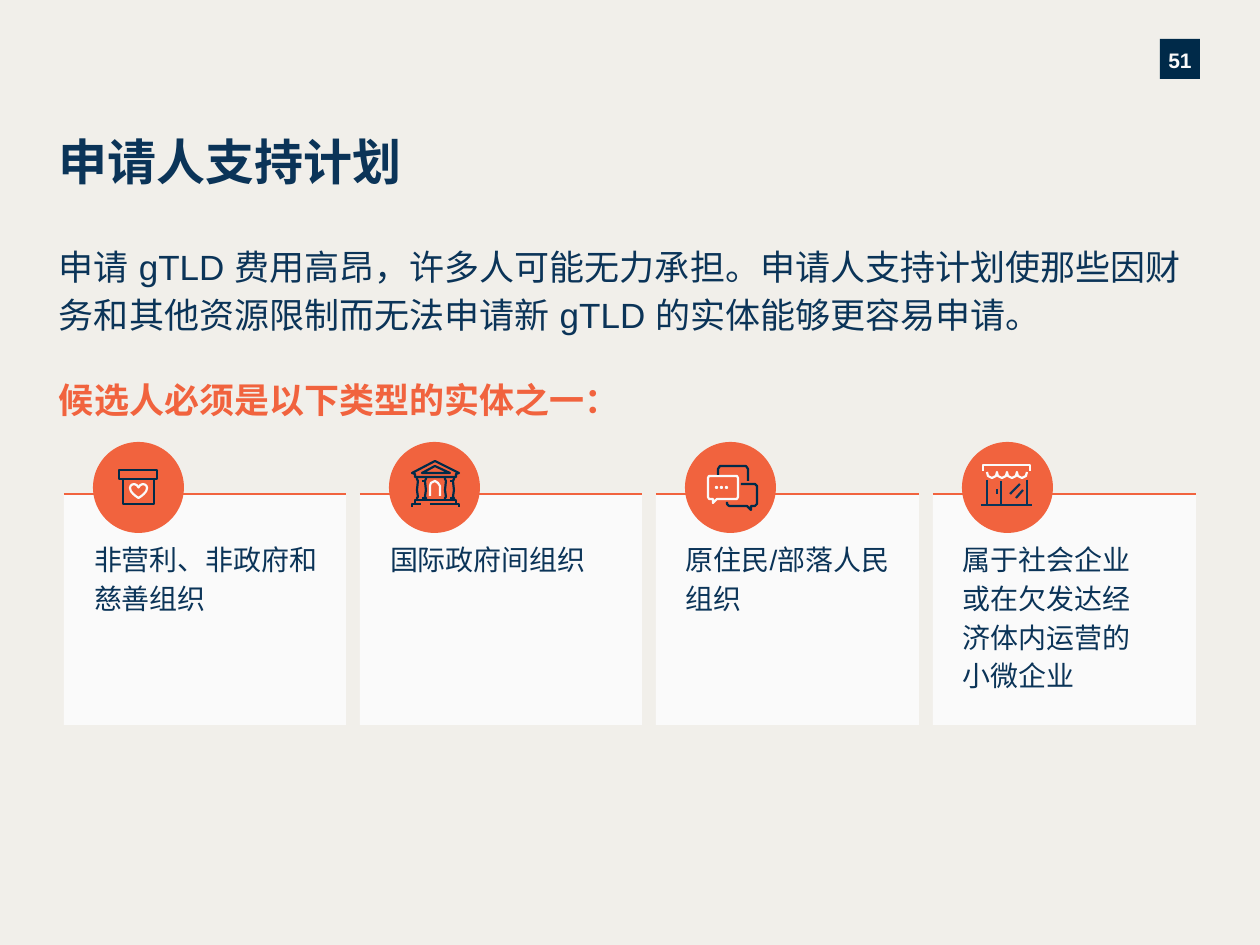
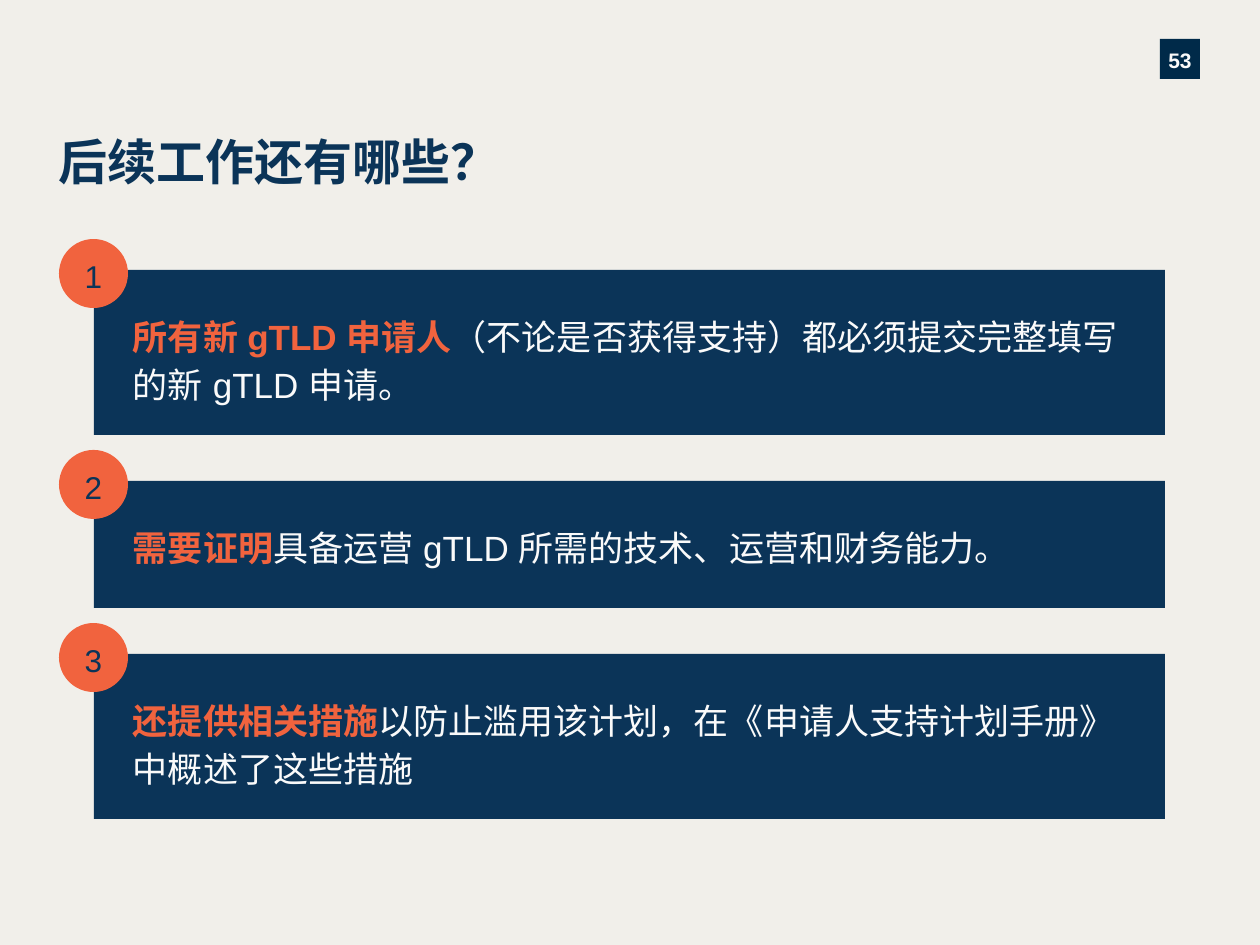
from lxml import etree
from pptx import Presentation
from pptx.dml.color import RGBColor
from pptx.enum.shapes import MSO_CONNECTOR, MSO_SHAPE
from pptx.enum.text import MSO_ANCHOR, MSO_AUTO_SIZE, PP_ALIGN
from pptx.oxml.ns import qn
from pptx.util import Emu, Pt

RECT, OVAL, HEART = MSO_SHAPE.RECTANGLE, MSO_SHAPE.OVAL, MSO_SHAPE.HEART
STRAIGHT = MSO_CONNECTOR.STRAIGHT
LEFT, CENTER = PP_ALIGN.LEFT, PP_ALIGN.CENTER
TOP, MIDDLE = MSO_ANCHOR.TOP, MSO_ANCHOR.MIDDLE
NO_FIT = MSO_AUTO_SIZE.NONE

PAPER, WHITE, NAVY, INK, BADGE, ORANGE = (
    "F1EFEA", "FAFAFA", "0B3458", "002B49", "002A49", "F1633E")
BODY_FONT, HEAD_FONT = "Arial", "Noto Sans"
EMU_PER_PX = 914400 / 126
STROKE = 1.25
MARGIN = 59


def px(n):
    return Emu(round(n * EMU_PER_PX))


def rgb(color):
    return RGBColor.from_string(color)


def set_frame(tf, insets=(0, 0, 0, 0), anchor=TOP, align=LEFT, spacing=1.15):
    tf.word_wrap = True
    tf.auto_size = NO_FIT
    tf.vertical_anchor = anchor
    tf.margin_left, tf.margin_top, tf.margin_right, tf.margin_bottom = map(px, insets)
    p = tf.paragraphs[0]
    p.alignment = align
    p.line_spacing = spacing
    p.space_before = Pt(0)
    return tf


def write(tf, text, size=20, color=NAVY, bold=False, font=BODY_FONT):
    p = tf.paragraphs[0]
    for i, line in enumerate(text.split("\n")):
        if i:
            p.add_line_break()
        r = p.add_run()
        r.text = line
        r.font.size = Pt(size)
        r.font.bold = bold
        r.font.color.rgb = rgb(color)
        r.font.name = font
        etree.SubElement(r.font._element, qn("a:ea")).set("typeface", font)


def paint(s, fill=None, line=None):
    s.shadow.inherit = False
    if fill:
        s.fill.solid()
        s.fill.fore_color.rgb = rgb(fill)
    else:
        s.fill.background()
    if line:
        s.line.color.rgb = rgb(line)
        s.line.width = Pt(STROKE)
    else:
        s.line.fill.background()
    return s


def add_preset(slide, kind, x, y, w, h, fill=None, line=None):
    return paint(slide.shapes.add_shape(kind, px(x), px(y), px(w), px(h)), fill, line)


def add_label(slide, x, y, w, h, text, **fmt):
    s = slide.shapes.add_textbox(px(x), px(y), px(w), px(h))
    write(set_frame(s.text_frame), text, **fmt)


def add_line(slide, x1, y1, x2, y2, color):
    c = slide.shapes.add_connector(STRAIGHT, px(x1), px(y1), px(x2), px(y2))
    c.line.color.rgb = rgb(color)
    c.line.width = Pt(STROKE)
    etree.SubElement(c._element.spPr, qn("a:effectLst"))


def add_stroke(slide, x, y, points, color, close=False):
    pts = [(x + dx, y + dy) for dx, dy in points]
    if len(pts) == 2:
        add_line(slide, *pts[0], *pts[1], color)
        return
    pts = [(px(a), px(b)) for a, b in pts]
    builder = slide.shapes.build_freeform(*pts[0])
    builder.add_line_segments(pts[1:], close=close)
    paint(builder.convert_to_shape(), line=color)


def draw_donation_box(slide, x, y):
    add_preset(slide, RECT, x + 26, y + 28, 38, 9, line=INK)
    add_preset(slide, RECT, x + 30, y + 37, 31, 25, line=INK)
    add_preset(slide, HEART, x + 37, y + 42, 17, 14, line=WHITE)


def draw_institution(slide, x, y):
    outer_side = [(28, 58), (28, 56), (29, 55), (28, 48), (29, 39), (28, 37), (28, 35)]
    inner_side = [(65 - a, b) for a, b in outer_side]
    for dx in (0, 28):
        for part in (outer_side, inner_side, [(33, 39), (36, 39)], [(33, 56), (36, 56)]):
            add_stroke(slide, x + dx, y, part, INK)
    for part in ([(41, 62), (70, 62), (70, 65)],
                 [(23, 65), (23, 62), (32, 62)],
                 [(26, 62), (26, 58), (67, 58), (67, 62)]):
        add_stroke(slide, x, y, part, INK)
    door = [(41, 54), (41, 44), (42, 41), (46, 39), (49, 41), (51, 44), (51, 54)]
    add_stroke(slide, x, y, door, WHITE)
    pediment = [(46, 24), (33, 31), (61, 31)]
    roof = [(67, 35), (26, 35), (26, 32), (23, 31), (46, 19), (70, 31), (67, 32)]
    for part in (pediment, roof):
        add_stroke(slide, x, y, part, INK, close=True)


def draw_conversation(slide, x, y):
    front = [(24, 34), (52, 34), (53, 36), (53, 55), (52, 57), (32, 57),
             (28, 61), (28, 57), (24, 57), (23, 55), (23, 36)]
    right = [(42, 60), (42, 62), (44, 64), (62, 64), (66, 68), (66, 64),
             (70, 64), (72, 62), (72, 44), (70, 42), (56, 42)]
    back = [(33, 33), (33, 27), (35, 24), (61, 24), (63, 27), (63, 39)]
    add_stroke(slide, x, y, front, WHITE, close=True)
    add_stroke(slide, x, y, right, INK)
    add_stroke(slide, x, y, back, INK)
    for dx in (31, 36, 41):
        add_preset(slide, OVAL, x + dx, y + 45, 1, 1, WHITE, WHITE)


def draw_shop(slide, x, y):
    for part in ([(25, 38), (25, 63)], [(39, 39), (39, 63)], [(65, 38), (65, 63)],
                 [(35, 47), (35, 52)], [(19, 63), (70, 63)],
                 [(58, 42), (48, 52)], [(61, 48), (54, 56)]):
        add_stroke(slide, x, y, part, NAVY)
    scallop = [(0, 30), (1, 34), (5, 36), (9, 34), (10, 30)]
    fringe = [(25 + 10 * i + a, b) for i in range(4) for a, b in scallop]
    add_stroke(slide, x, y, fringe, WHITE)
    add_stroke(slide, x, y, [(21, 29), (21, 23), (68, 23), (68, 29)], WHITE)


def add_card(slide, x, y, w, h, text, draw_icon):
    card = add_preset(slide, RECT, x, y, w, h, WHITE)
    write(set_frame(card.text_frame, (30, 44, 20, 25)), text, size=16)
    add_line(slide, x, y, x + w, y, ORANGE)
    add_preset(slide, OVAL, x + 29, y - 52, 91, 91, ORANGE)
    draw_icon(slide, x + 29, y - 52)


def add_step(slide, x, y, w, h, number, runs):
    box = add_preset(slide, RECT, x, y, w, h, NAVY)
    tf = set_frame(box.text_frame, (39, 39, 44, 39))
    for text, fmt in runs:
        write(tf, text, **fmt)
    dot = add_preset(slide, OVAL, x - 35, y - 31, 69, 69, ORANGE)
    tf = set_frame(dot.text_frame, (13, 6, 13, 6), MIDDLE, CENTER)
    write(tf, str(number), size=18)


def add_base(prs, title, page):
    slide = prs.slides.add_slide(prs.slide_layouts.get_by_name("Title Only"))
    badge = add_preset(slide, RECT, 1160, 39, 40, 40, BADGE)
    tf = set_frame(badge.text_frame, anchor=MIDDLE, align=CENTER, spacing=1.08)
    write(tf, str(page), size=12, color=WHITE, bold=True)
    s = slide.shapes.title
    s.left, s.top, s.width, s.height = px(MARGIN), px(123), px(740), px(72)
    write(set_frame(s.text_frame), title, size=28, bold=True, font=HEAD_FONT)
    return slide


def build_support_slide(prs):
    slide = add_base(prs, "申请人支持计划", 51)
    add_label(slide, MARGIN, 239, 1137, 120,
              "申请 gTLD 费用高昂，许多人可能无力承担。申请人支持计划使那些因"
              "财务和其他资源限制而无法申请新 gTLD 的实体能够更容易申请。")
    add_label(slide, MARGIN, 372, 979, 54, "候选人必须是以下类型的实体之一：",
              color=ORANGE, bold=True, font=HEAD_FONT)
    cards = [
        (282, "非营利、非政府和慈善组织", draw_donation_box),
        (282, "国际政府间组织", draw_institution),
        (263, "原住民/部落人民组织", draw_conversation),
        (263, "属于社会企业\n或在欠发达经\n济体内运营的\n小微企业", draw_shop),
    ]
    x, gap = 64, 14
    for w, text, draw_icon in cards:
        add_card(slide, x, 494, w, 231, text, draw_icon)
        x += w + gap


def build_next_steps_slide(prs):
    slide = add_base(prs, "后续工作还有哪些？", 53)
    strong = dict(color=ORANGE, bold=True, font=HEAD_FONT)
    strong_latin = dict(strong, font=BODY_FONT)
    plain = dict(color=WHITE)
    steps = [
        (165, [("所有新 ", strong), ("gTLD ", strong_latin), ("申请人", strong),
               ("（不论是否获得支持）都必须提交完整填写的新 gTLD 申请。", plain)]),
        (127, [("需要证明", strong),
               ("具备运营 gTLD 所需的技术、运营和财务能力。", plain)]),
        (165, [("还提供相关措施", strong),
               ("以防止滥用该计划，在《申请人支持计划手册》中概述了这些措施", plain)]),
    ]
    y, gap = 270, 46
    for number, (h, runs) in enumerate(steps, 1):
        add_step(slide, 94, y, 1071, h, number, runs)
        y += h + gap


def main():
    prs = Presentation()
    prs.slide_width, prs.slide_height = px(1260), px(945)
    fill = prs.slide_master.background.fill
    fill.solid()
    fill.fore_color.rgb = rgb(PAPER)
    build_support_slide(prs)
    build_next_steps_slide(prs)
    prs.save("out.pptx")


if __name__ == "__main__":
    main()
